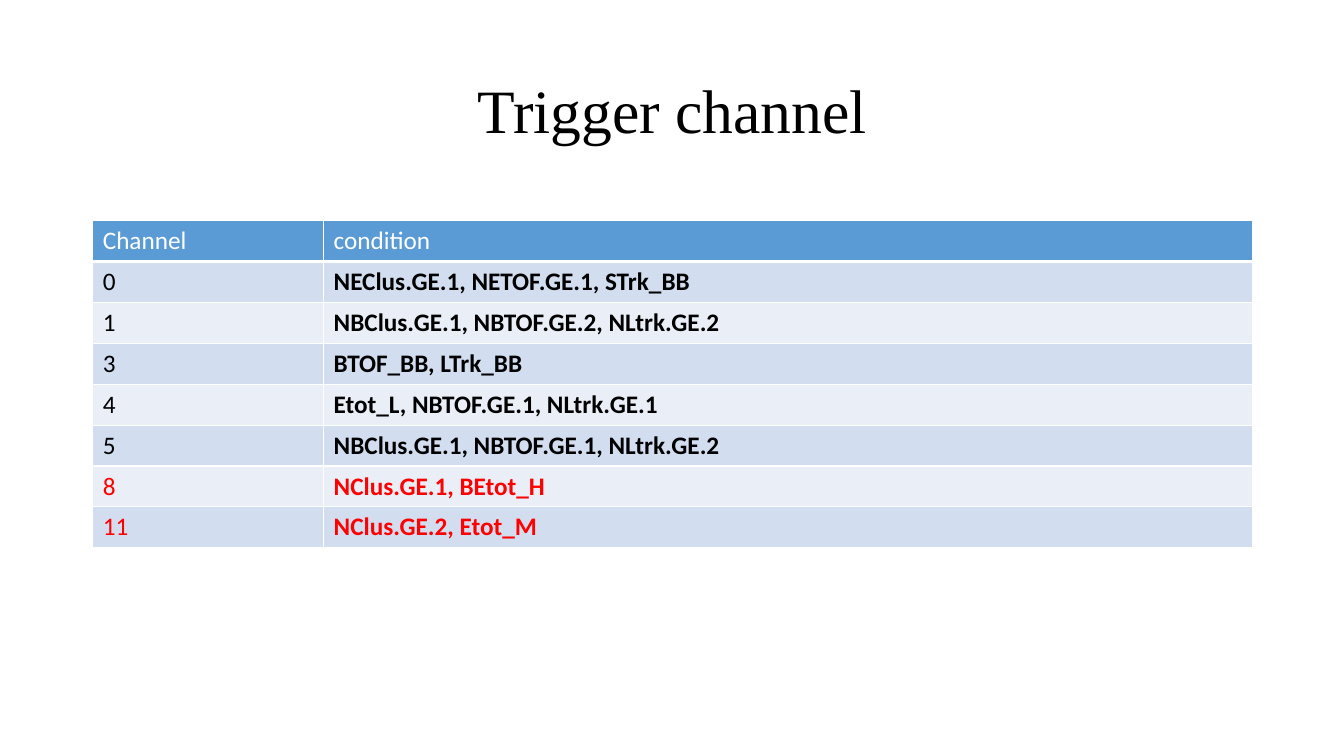
from dataclasses import dataclass

from lxml import etree
from pptx import Presentation
from pptx import util as u
from pptx.dml.color import RGBColor
from pptx.enum import text
from pptx.oxml.ns import qn

WHITE = RGBColor(0xFF, 0xFF, 0xFF)
BLACK = RGBColor(0x00, 0x00, 0x00)
RED = RGBColor(0xFF, 0x00, 0x00)
HEADER_BLUE = RGBColor(0x5B, 0x9B, 0xD5)
BAND_DARK = RGBColor(0xD2, 0xDE, 0xEF)
BAND_LIGHT = RGBColor(0xEA, 0xEF, 0xF7)

PAGE_WIDTH = u.Inches(13.33)
PAGE_HEIGHT = u.Inches(7.5)
MARGIN = u.Inches(0.92)
CONTENT_WIDTH = u.Inches(11.5)
TABLE_TOP = u.Inches(2.19)
TABLE_HEIGHT = u.Inches(3.24)
CHANNEL_WIDTH = u.Inches(2.29)


@dataclass(frozen=True)
class Trigger:
    channel: str
    condition: str
    color: RGBColor = BLACK


HEADER = Trigger("Channel", "condition", WHITE)
TRIGGERS = [
    Trigger("0", "NEClus.GE.1, NETOF.GE.1, STrk_BB"),
    Trigger("1", "NBClus.GE.1, NBTOF.GE.2, NLtrk.GE.2"),
    Trigger("3", "BTOF_BB, LTrk_BB"),
    Trigger("4", "Etot_L, NBTOF.GE.1, NLtrk.GE.1"),
    Trigger("5", "NBClus.GE.1, NBTOF.GE.1, NLtrk.GE.2"),
    Trigger("8", "NClus.GE.1, BEtot_H", RED),
    Trigger("11", "NClus.GE.2, Etot_M", RED),
]


def add_span(para, wording: str, font: str, size: int, color: RGBColor, bold: bool = False) -> None:
    span = para.add_run()
    span.text = wording
    span.font.name = font
    span.font.size = u.Pt(size)
    span.font.color.rgb = color
    span.font.bold = bold


def set_borders(cell, bottom_width: int) -> None:
    properties = cell._tc.get_or_add_tcPr()
    for index, side in enumerate("LRTB"):
        width = bottom_width if side == "B" else 1
        line = etree.Element(qn(f"a:ln{side}"), w=str(u.Pt(width)))
        fill = etree.SubElement(line, qn("a:solidFill"))
        etree.SubElement(fill, qn("a:srgbClr"), val=str(WHITE))
        properties.insert(index, line)


def add_title(page, wording: str) -> None:
    title = page.shapes.title
    title.left, title.top = MARGIN, u.Inches(0.4)
    title.width, title.height = CONTENT_WIDTH, u.Inches(1.45)
    frame = title.text_frame
    frame.auto_size = text.MSO_AUTO_SIZE.NONE
    frame.vertical_anchor = text.MSO_ANCHOR.MIDDLE
    para = frame.paragraphs[0]
    para.alignment = text.PP_ALIGN.CENTER
    para.line_spacing = 0.9
    add_span(para, wording, "Times New Roman", 44, BLACK)


def add_trigger_table(page, rows: list[Trigger]) -> None:
    table = page.shapes.add_table(
        len(rows), 2, MARGIN, TABLE_TOP, CONTENT_WIDTH, TABLE_HEIGHT
    ).table
    table.columns[0].width = CHANNEL_WIDTH
    table.columns[1].width = CONTENT_WIDTH - CHANNEL_WIDTH
    for row_index, trigger in enumerate(rows):
        is_header = row_index == 0
        band = BAND_DARK if row_index % 2 else BAND_LIGHT
        for column, wording in enumerate((trigger.channel, trigger.condition)):
            cell = table.cell(row_index, column)
            cell.fill.solid()
            cell.fill.fore_color.rgb = HEADER_BLUE if is_header else band
            set_borders(cell, 3 if is_header else 1)
            bold = column == 1 and not is_header
            add_span(cell.text_frame.paragraphs[0], wording, "Calibri", 18, trigger.color, bold)


def main() -> None:
    deck = Presentation()
    deck.slide_width, deck.slide_height = PAGE_WIDTH, PAGE_HEIGHT
    page = deck.slides.add_slide(deck.slide_layouts[5])
    add_title(page, "Trigger channel")
    add_trigger_table(page, [HEADER, *TRIGGERS])
    deck.save("out.pptx")


if __name__ == "__main__":
    main()
